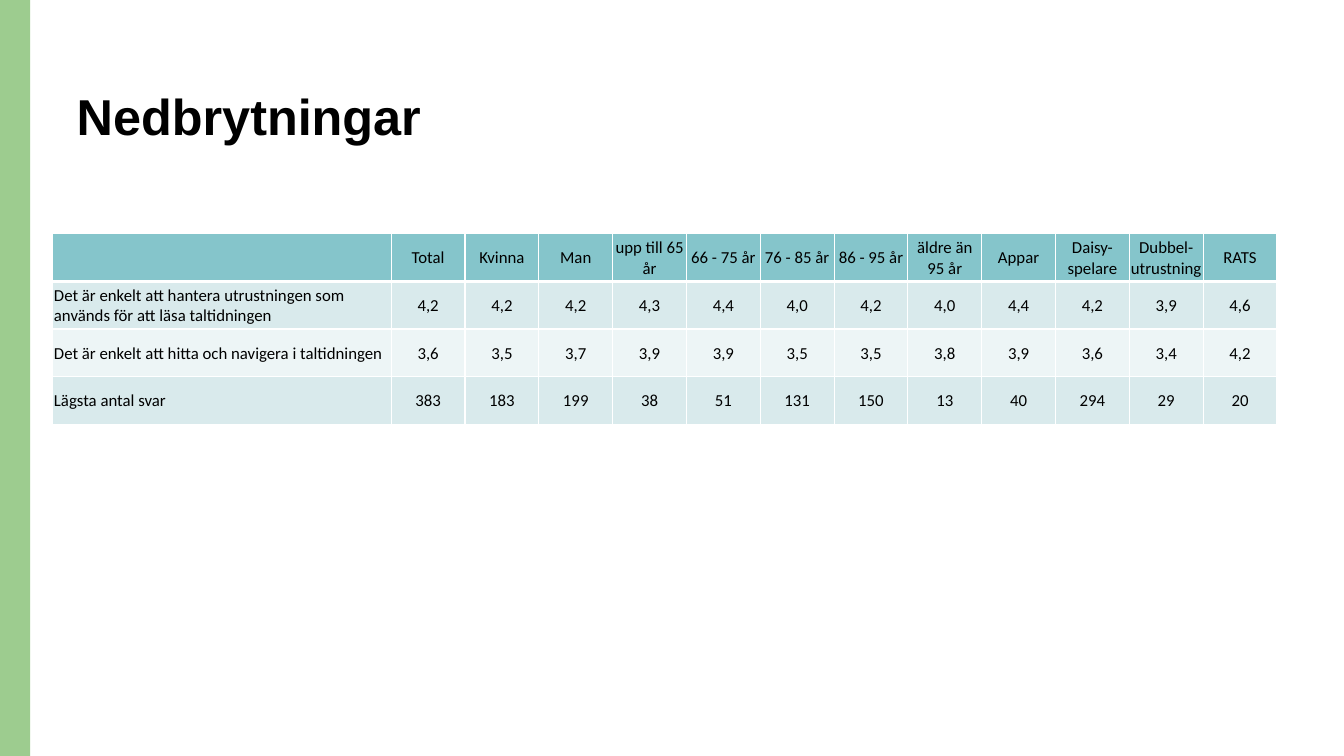
"""Build the slide "Nedbrytningar" with its table of ratings per group."""
from lxml.etree import SubElement
from pptx import Presentation
from pptx.dml.color import RGBColor
from pptx.enum.shapes import MSO_SHAPE
from pptx.enum.text import MSO_ANCHOR as Anchor, MSO_AUTO_SIZE as AutoSize, PP_ALIGN as Align
from pptx.oxml.ns import qn
from pptx.util import Cm, Pt

TITLE = "Nedbrytningar"
GROUPS = ["", "Total", "Kvinna", "Man", "upp till 65 år", "66 - 75 år", "76 - 85 år",
          "86 - 95 år", "äldre än 95 år", "Appar", "Daisy-spelare", "Dubbel-utrustning", "RATS"]
ANSWERS = [
    ["Det är enkelt att hantera utrustningen som används för att läsa taltidningen",
     "4,2", "4,2", "4,2", "4,3", "4,4", "4,0", "4,2", "4,0", "4,4", "4,2", "3,9", "4,6"],
    ["Det är enkelt att hitta och navigera i taltidningen",
     "3,6", "3,5", "3,7", "3,9", "3,9", "3,5", "3,5", "3,8", "3,9", "3,6", "3,4", "4,2"],
    ["Lägsta antal svar",
     "383", "183", "199", "38", "51", "131", "150", "13", "40", "294", "29", "20"],
]
COLOURS = {"bar": "9DCC8F", "header": "85C5CB", "odd": "D9EAEC", "even": "EDF5F6",
           "border": "FFFFFF", "text": "000000"}
QUESTION_WIDTH, GROUP_WIDTH, ROW_HEIGHT = Cm(8.53), Cm(1.86), Cm(1.2)


def colour(name):
    return RGBColor.from_string(COLOURS[name])


def add_run(paragraph, text, font, size, bold):
    run = paragraph.add_run()
    run.text = text
    run.font.name, run.font.size, run.font.bold = font, Pt(size), bold
    run.font.color.rgb = colour("text")


def add_borders(cell, bottom_width):
    properties = cell._tc.get_or_add_tcPr()
    for side, width in (("L", 1), ("R", 1), ("T", 1), ("B", bottom_width)):
        line = SubElement(properties, qn(f"a:ln{side}"), w=str(Pt(width)))
        fill = SubElement(line, qn("a:solidFill"))
        SubElement(fill, qn("a:srgbClr"), val=COLOURS["border"])


def add_bar(slide, height):
    bar = slide.shapes.add_shape(MSO_SHAPE.RECTANGLE, 0, 0, Cm(0.76), height)
    bar.shadow.inherit = False
    bar.fill.solid()
    bar.fill.fore_color.rgb = colour("bar")
    bar.line.fill.background()


def add_title(slide):
    title = slide.shapes.title
    title.left, title.top, title.width, title.height = Cm(1.68), Cm(1.3), Cm(30.35), Cm(2.51)
    title.text_frame.vertical_anchor = Anchor.BOTTOM
    title.text_frame.auto_size = AutoSize.NONE
    heading = title.text_frame.paragraphs[0]
    heading.alignment = Align.LEFT
    heading.line_spacing = 0.9
    add_run(heading, TITLE, "Arial", 36, True)


def add_ratings(slide):
    rows = [GROUPS] + ANSWERS
    widths = [QUESTION_WIDTH] + [GROUP_WIDTH] * (len(GROUPS) - 1)
    ratings = slide.shapes.add_table(len(rows), len(GROUPS), Cm(1.33), Cm(5.89),
                                     sum(widths), ROW_HEIGHT * len(rows)).table
    for column, width in zip(ratings.columns, widths):
        column.width = width
    for r, row in enumerate(rows):
        ratings.rows[r].height = ROW_HEIGHT
        band = "header" if r == 0 else "odd" if r % 2 else "even"
        for c, text in enumerate(row):
            cell = ratings.cell(r, c)
            add_borders(cell, 3 if r == 0 else 1)
            cell.fill.solid()
            cell.fill.fore_color.rgb = colour(band)
            cell.vertical_anchor = Anchor.MIDDLE
            cell.margin_left = cell.margin_right = cell.margin_top = Cm(0.03)
            cell.margin_bottom = 0
            if text:
                paragraph = cell.text_frame.paragraphs[0]
                paragraph.alignment = Align.CENTER if c else Align.LEFT
                add_run(paragraph, text, "Calibri", 12, False)


def main():
    deck = Presentation()
    deck.slide_width, deck.slide_height = Cm(33.87), Cm(19.05)
    slide = deck.slides.add_slide(deck.slide_layouts[5])
    add_bar(slide, deck.slide_height)
    add_title(slide)
    add_ratings(slide)
    deck.save("out.pptx")


if __name__ == "__main__":
    main()
